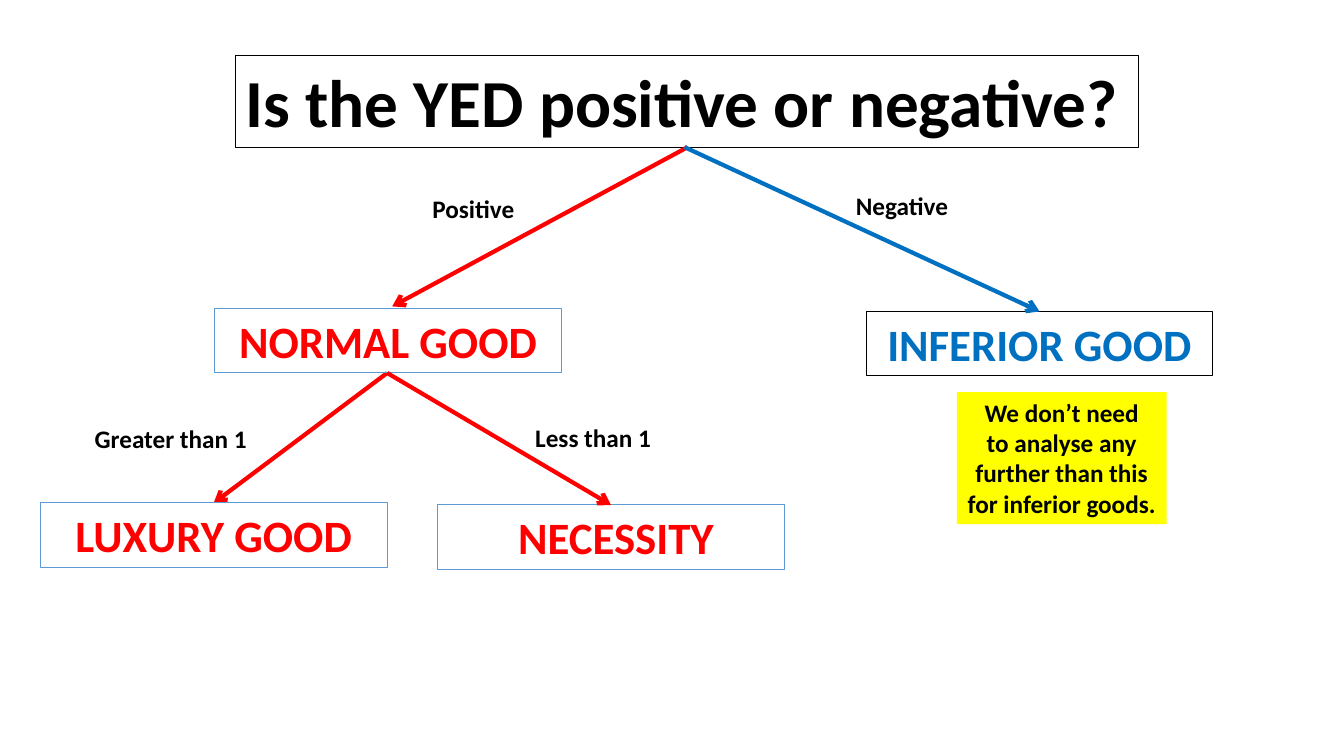
from lxml import etree
from pptx import Presentation
from pptx.dml.color import RGBColor
from pptx.enum.shapes import MSO_CONNECTOR, MSO_SHAPE
from pptx.enum.text import MSO_ANCHOR, MSO_AUTO_SIZE, PP_ALIGN
from pptx.oxml.ns import qn
from pptx.util import Inches, Pt

RECTANGLE = MSO_SHAPE.RECTANGLE
STRAIGHT = MSO_CONNECTOR.STRAIGHT
TOP = MSO_ANCHOR.TOP
GROW = MSO_AUTO_SIZE.SHAPE_TO_FIT_TEXT
LEFT = PP_ALIGN.LEFT
CENTER = PP_ALIGN.CENTER

BLACK = RGBColor(0x00, 0x00, 0x00)
RED = RGBColor(0xFF, 0x00, 0x00)
BLUE = RGBColor(0x00, 0x70, 0xC0)
PALE_BLUE = RGBColor(0x5B, 0x9B, 0xD5)
YELLOW = RGBColor(0xFF, 0xFF, 0x00)


class DecisionTree:
    """Draws the boxes, arrows and labels of a decision tree on one slide."""

    font = "Calibri"
    label_size = 18
    good_size = 32
    title_size = 48
    good_width = 3.44
    good_height = 0.64

    def __init__(self, page):
        self.page = page

    def add_words(self, shape, text, size, color, align, wrap):
        frame = shape.text_frame
        frame.word_wrap = wrap
        frame.auto_size = GROW
        frame.vertical_anchor = TOP
        para = frame.paragraphs[0]
        para.alignment = align
        for index, line in enumerate(text.split("\n")):
            if index:
                para.add_line_break()
            span = para.add_run()
            span.text = line
            span.font.name = self.font
            span.font.size = Pt(size)
            span.font.bold = True
            span.font.color.rgb = color

    def box(self, left, top, width, height, text, size, color=BLACK,
            border=None, fill=None, align=CENTER, wrap=True):
        place = [Inches(value) for value in (left, top, width, height)]
        box = self.page.shapes.add_shape(RECTANGLE, *place)
        box.shadow.inherit = False
        if fill is None:
            box.fill.background()
        else:
            box.fill.solid()
            box.fill.fore_color.rgb = fill
        if border is None:
            box.line.fill.background()
        else:
            box.line.color.rgb = border
            box.line.width = Pt(0.75)
        self.add_words(box, text, size, color, align, wrap)

    def good(self, left, top, text, color=RED, border=PALE_BLUE):
        self.box(left, top, self.good_width, self.good_height, text,
                 self.good_size, color, border)

    def label(self, left, top, width, text):
        place = [Inches(value) for value in (left, top, width, 0.4)]
        box = self.page.shapes.add_textbox(*place)
        self.add_words(box, text, self.label_size, BLACK, LEFT, False)

    def arrow(self, start, end, color=RED):
        ends = [Inches(value) for value in (*start, *end)]
        arrow = self.page.shapes.add_connector(STRAIGHT, *ends)
        arrow.line.color.rgb = color
        arrow.line.width = Pt(3)
        properties = arrow._element.spPr
        outline = properties.find(qn("a:ln"))
        etree.SubElement(outline, qn("a:tailEnd"), type="arrow")
        etree.SubElement(properties, qn("a:effectLst"))


def main():
    deck = Presentation()
    deck.slide_width = Inches(13.33)
    deck.slide_height = Inches(7.5)
    tree = DecisionTree(deck.slides.add_slide(deck.slide_layouts[6]))

    tree.arrow((3.84, 3.7), (2.12, 4.99))
    tree.good(2.13, 3.06, "NORMAL GOOD")
    tree.good(8.59, 3.09, "INFERIOR GOOD", BLUE, BLACK)
    tree.good(0.4, 4.99, "LUXURY GOOD")
    tree.good(4.34, 5.01, " NECESSITY")
    tree.arrow((3.84, 3.7), (6.06, 5.01))
    tree.label(0.84, 4.15, 1.72, "Greater than 1")
    tree.label(5.21, 4.14, 1.36, "Less than 1")

    tree.box(2.34, 0.55, 8.95, 0.91, "Is the YED positive or negative?",
             tree.title_size, border=BLACK, align=LEFT)
    tree.arrow((6.82, 1.46), (3.89, 3.04))
    tree.arrow((6.79, 1.46), (10.31, 3.09), BLUE)
    tree.label(4.19, 1.87, 1.02, "Positive")
    tree.label(8.39, 1.84, 1.12, "Negative")

    note = "We don’t need\nto analyse any\nfurther than this\nfor inferior goods."
    tree.box(9.49, 3.89, 2.08, 1.31, note, tree.label_size,
             fill=YELLOW, wrap=False)

    deck.save("out.pptx")


if __name__ == "__main__":
    main()
